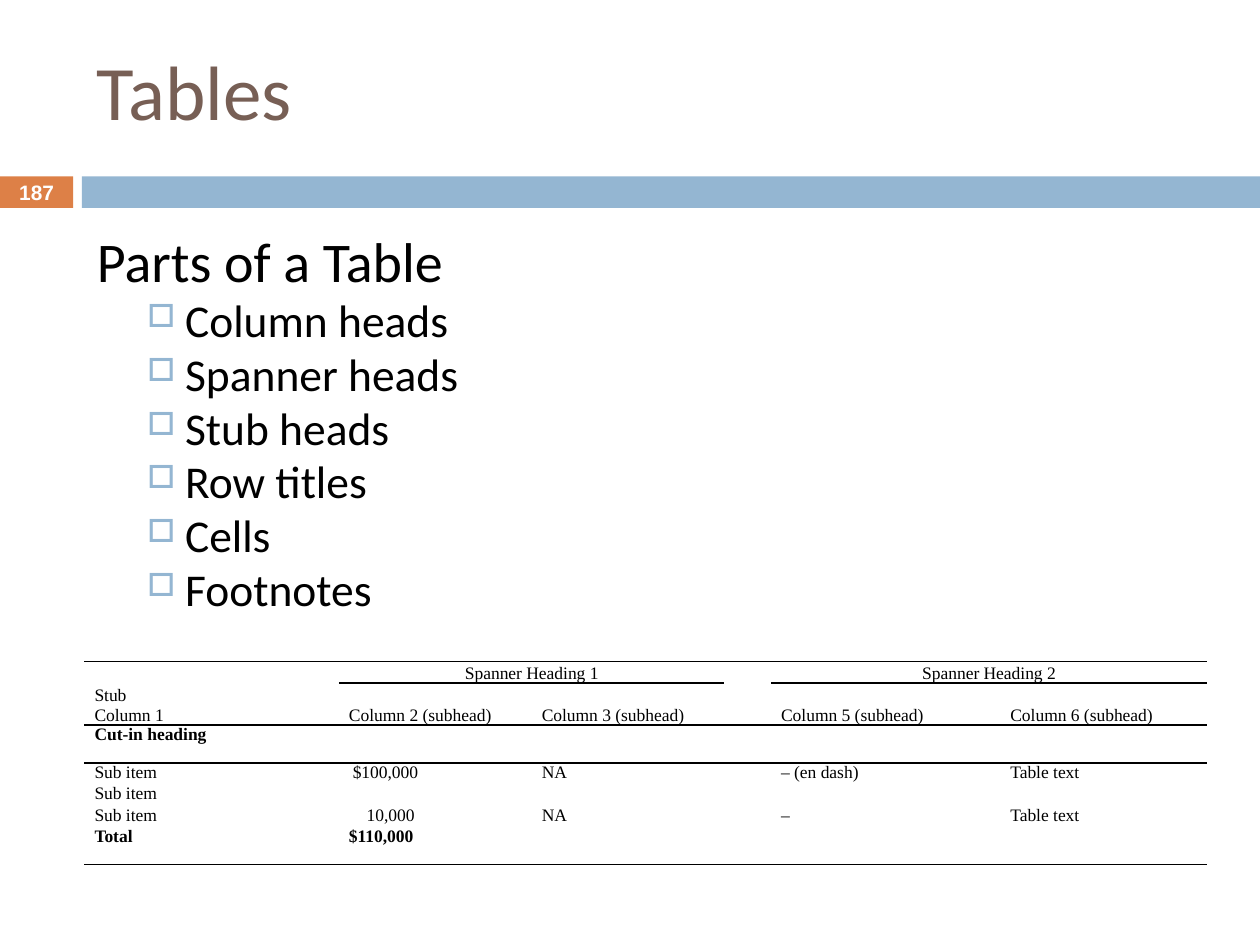
from lxml import etree
from pptx import Presentation
from pptx.dml.color import RGBColor
from pptx.enum.shapes import MSO_SHAPE
from pptx.enum.text import MSO_ANCHOR as Anchor, PP_ALIGN as Align
from pptx.oxml.ns import qn
from pptx.util import Inches, Pt

ORANGE = RGBColor(0xDD, 0x80, 0x47)
BLUE = RGBColor(0x94, 0xB6, 0xD2)
BROWN = RGBColor(0x77, 0x5F, 0x55)
BLACK = RGBColor(0, 0, 0)
WHITE = RGBColor(0xFF, 0xFF, 0xFF)
NO_STYLE = "{2D5ABB26-0587-4C30-8999-92F81FD0307C}"

BULLETS = ["Column heads", "Spanner heads", "Stub heads", "Row titles", "Cells", "Footnotes"]
COLUMN_WIDTHS = [2.02, 1.53, 1.53, 0.37, 1.82, 1.64]
ROW_HEIGHTS = [0.17, 0.17, 0.3, 0.17, 0.17, 0.17, 0.3]
ROWS = [
    ["Stub\vColumn 1", "Spanner Heading 1", "", "", "Spanner Heading 2", ""],
    ["", "Column 2 (subhead)", "Column 3 (subhead)", "", "Column 5 (subhead)", "Column 6 (subhead)"],
    ["Cut-in heading", "", "", "", "", ""],
    ["Sub item", "$100,000", "NA", "", "– (en dash)", "Table text"],
    ["Sub item", "", "", "", "", ""],
    ["Sub item", "10,000", "NA", "", "–", "Table text"],
    ["Total", "$110,000", "", "", "", ""],
]
MERGES = [((0, 0), (1, 0)), ((0, 1), (0, 2)), ((0, 4), (0, 5)), ((4, 2), (4, 4))]
BOLD_ROWS = (2, 6)
AMOUNT_INDENTS = {(3, 1): 0.03, (5, 1): 0.14}


def write_text(paragraph, text, font="Calibri", size=10, color=BLACK, bold=False,
               align=Align.LEFT, before=0, after=0, spacing=1.0, margin=0, indent=0):
    """Write formatted text into a paragraph."""
    paragraph.text = text
    paragraph.alignment = align
    paragraph.space_before, paragraph.space_after = Pt(before), Pt(after)
    paragraph.line_spacing = spacing
    properties = paragraph._p.get_or_add_pPr()
    properties.set("marL", str(Inches(margin)))
    properties.set("indent", str(Inches(indent)))
    for run in paragraph.runs:
        run.font.name, run.font.size, run.font.bold = font, Pt(size), bold
        run.font.color.rgb = color
    for line_break in paragraph._p.findall(qn("a:br")):
        etree.SubElement(line_break, qn("a:rPr"), sz=str(size * 100))
    if not text:
        etree.SubElement(paragraph._p, qn("a:endParaRPr"), sz=str(size * 100))


def add_bullet(paragraph):
    """Give a paragraph a small blue square bullet."""
    properties = paragraph._p.get_or_add_pPr()
    color = etree.SubElement(properties, qn("a:buClr"))
    etree.SubElement(color, qn("a:srgbClr"), val=str(BLUE))
    etree.SubElement(properties, qn("a:buSzPct"), val="70000")
    etree.SubElement(properties, qn("a:buChar"), char="□")


def add_text_frame(slide, box, anchor=Anchor.TOP):
    """Add a wrapping text box and return its text frame."""
    frame = slide.shapes.add_textbox(*map(Inches, box)).text_frame
    frame.word_wrap = True
    frame.vertical_anchor = anchor
    return frame


def add_bar(slide, box, color):
    """Add a plain filled rectangle."""
    shape = slide.shapes.add_shape(MSO_SHAPE.RECTANGLE, *map(Inches, box))
    shape.shadow.inherit = False
    shape.fill.solid()
    shape.fill.fore_color.rgb = color
    shape.line.fill.background()


def add_title(slide, box):
    """Add the slide title."""
    frame = add_text_frame(slide, box, Anchor.MIDDLE)
    write_text(frame.paragraphs[0], "Tables", size=44, color=BROWN)


def add_parts_list(slide, box):
    """Add the heading and the bulleted parts of a table."""
    frame = add_text_frame(slide, box)
    write_text(frame.paragraphs[0], "Parts of a Table", size=32, before=1.6,
               margin=0.35, indent=-0.35)
    for text in BULLETS:
        paragraph = frame.add_paragraph()
        write_text(paragraph, text, size=26, before=2.6, spacing=0.9, margin=0.7, indent=-0.3)
        add_bullet(paragraph)


def add_slide_number(slide, box):
    """Add the slide number."""
    frame = add_text_frame(slide, box, Anchor.MIDDLE)
    write_text(frame.paragraphs[0], "187", font="Arial", size=11.9, color=WHITE,
               bold=True, align=Align.CENTER)


def add_borders(cell, sides):
    """Draw one-point black borders on the named sides of a cell."""
    properties = cell._tc.get_or_add_tcPr()
    for index, side in enumerate(sides):
        line = etree.Element(qn(f"a:ln{side}"), w=str(Pt(1)))
        fill = etree.SubElement(line, qn("a:solidFill"))
        etree.SubElement(fill, qn("a:srgbClr"), val=str(BLACK))
        properties.insert(index, line)


def border_sides(row, column):
    """Return the sides of a table cell that carry a rule."""
    if row == 0:
        return "T" if column == 3 else "TB"
    if row == 1:
        return "B" if column in (0, 3) else "TB"
    return {2: "T", 6: "B"}.get(row, "")


def add_sample_table(slide, box):
    """Add the sample table with spanner heads and subheads."""
    table_frame = slide.shapes.add_table(len(ROWS), len(COLUMN_WIDTHS), *map(Inches, box))
    table = table_frame.table
    table.first_row = table.horz_banding = False
    table._tbl.tblPr.find(qn("a:tableStyleId")).text = NO_STYLE
    for column, width in zip(table.columns, COLUMN_WIDTHS):
        column.width = Inches(width)
    for row, height in zip(table.rows, ROW_HEIGHTS):
        row.height = Inches(height)
    for row, texts in enumerate(ROWS):
        for column, text in enumerate(texts):
            cell = table.cell(row, column)
            cell.margin_left = cell.margin_right = Inches(0.08)
            cell.margin_top = cell.margin_bottom = 0
            cell.vertical_anchor = Anchor.BOTTOM if row < 2 else Anchor.TOP
            cell.fill.background()
            write_text(cell.text_frame.paragraphs[0], text, font="Times New Roman",
                       bold=row in BOLD_ROWS, before=2, after=2,
                       align=Align.CENTER if row == 0 and column else Align.LEFT,
                       margin=AMOUNT_INDENTS.get((row, column), 0))
            add_borders(cell, border_sides(row, column))
    for first, last in MERGES:
        table.cell(*first).merge(table.cell(*last))


def main():
    """Build the slide and save it."""
    presentation = Presentation()
    presentation.slide_width, presentation.slide_height = Inches(10), Inches(7.5)
    slide = presentation.slides.add_slide(presentation.slide_layouts[6])
    add_bar(slide, (0, 1.4, 0.58, 0.25), ORANGE)
    add_bar(slide, (0.65, 1.4, 9.35, 0.25), BLUE)
    add_title(slide, (0.67, 0.17, 8.92, 1.08))
    add_parts_list(slide, (0.67, 1.75, 8.92, 3.25))
    add_sample_table(slide, (0.67, 5.25, 8.92, 1.43))
    add_slide_number(slide, (0, 1.39, 0.58, 0.27))
    presentation.save("out.pptx")


if __name__ == "__main__":
    main()
